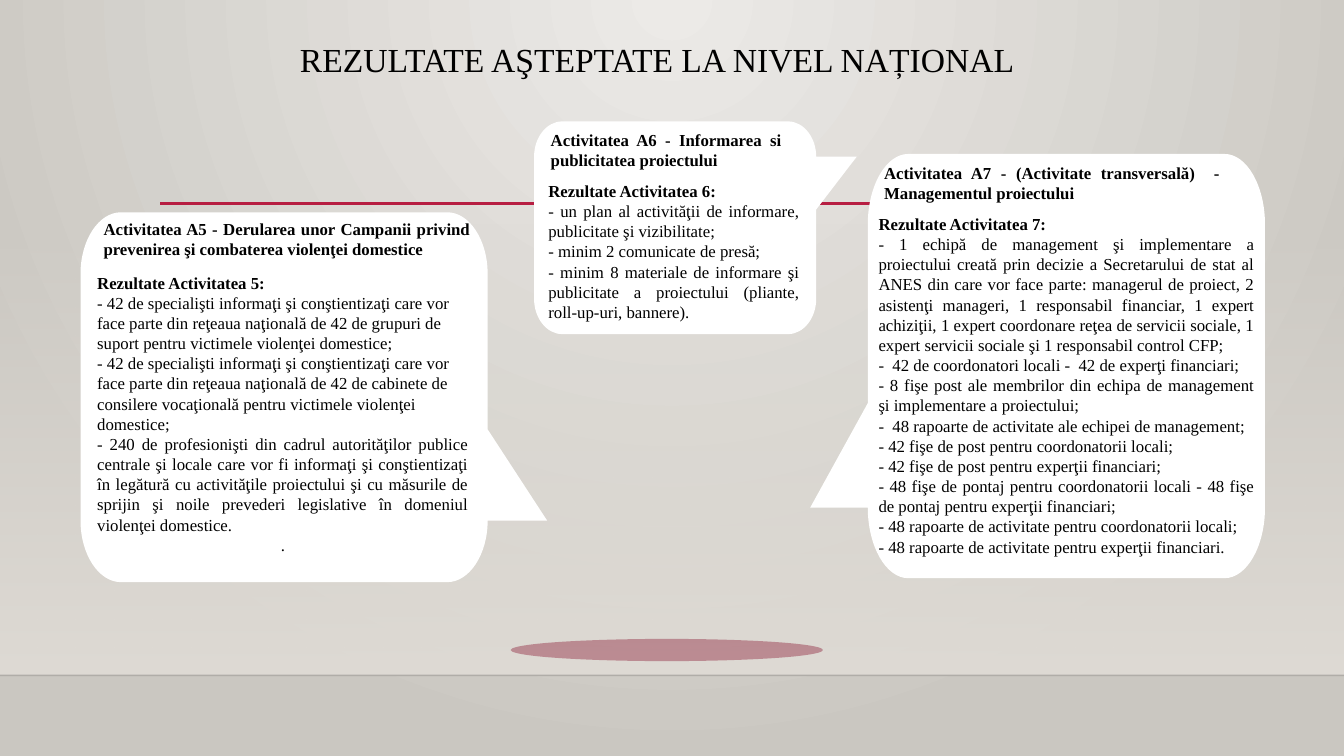
from dataclasses import dataclass
from typing import NamedTuple

import lxml.etree
import pptx
import pptx.dml.color
import pptx.dml.fill
import pptx.enum.shapes
import pptx.enum.text
import pptx.oxml.ns
import pptx.shapes.base
import pptx.slide
import pptx.util

Cm = pptx.util.Cm
RGBColor = pptx.dml.color.RGBColor
Align = pptx.enum.text.PP_ALIGN
Preset = pptx.enum.shapes.MSO_SHAPE
qn = pptx.oxml.ns.qn

BLACK = RGBColor(0x00, 0x00, 0x00)
WHITE = RGBColor(0xFF, 0xFF, 0xFF)
CRIMSON = RGBColor(0xB7, 0x1E, 0x42)
DARK_CRIMSON = RGBColor(0x89, 0x17, 0x31)
FLOOR = RGBColor(0xDF, 0xDB, 0xD5)
BACKGROUND_CENTRE = RGBColor(0xEC, 0xEA, 0xE7)
BACKGROUND_EDGE = RGBColor(0xCA, 0xC7, 0xC1)

FONT = "Times New Roman"
SLIDE_WIDTH, SLIDE_HEIGHT = 33.87, 19.05
HORIZON = 17.02
ROUNDING = 0.55
TOP_RIGHT, BOTTOM_RIGHT, BOTTOM_LEFT = range(3)
Point = tuple[float, float]


class Box(NamedTuple):
    """A frame in centimetres."""
    left: float
    top: float
    width: float
    height: float


class Item(NamedTuple):
    text: str
    alignment: Align = Align.JUSTIFY
    bold: bool = False


@dataclass
class Bubble:
    """A rounded callout whose tail leaves the side next to one corner."""
    body: Box
    corner_width: float
    corner_height: float
    tail_corner: int
    tip_x: float
    foot_y: float
    heading_box: Box
    heading: str
    results_box: Box
    results: list[Item]


BUBBLES = [
    Bubble(
        Box(2.03, 5.35, 10.26, 9.32), 1.02, 1.55, BOTTOM_RIGHT, 13.79, 10.82,
        Box(2.36, 5.39, 9.75, 1.27),
        "Activitatea A5 - Derularea unor Campanii privind prevenirea şi combaterea violenţei domestice",
        Box(2.2, 6.74, 9.86, 7.44),
        [
            Item("Rezultate Activitatea 5:", Align.LEFT, True),
            Item("- 42 de specialişti informaţi şi conştientizaţi care vor face parte din reţeaua "
                 "naţională de 42 de grupuri de suport pentru victimele violenţei domestice;", Align.LEFT),
            Item("- 42 de specialişti informaţi şi conştientizaţi care vor face parte din reţeaua naţională "
                 "de 42 de cabinete de consilere vocaţională pentru victimele violenţei domestice;", Align.LEFT),
            Item("- 240 de profesionişti din cadrul autorităţilor publice centrale şi locale care vor fi "
                 "informaţi şi conştientizaţi în legătură cu activităţile proiectului şi cu măsurile de "
                 "sprijin şi noile prevederi legislative în domeniul violenţei domestice."),
            Item(".", Align.CENTER),
        ]),
    Bubble(
        Box(13.46, 3.06, 7.11, 5.36), 0.71, 0.89, TOP_RIGHT, 21.59, 5.28,
        Box(13.63, 3.15, 6.32, 1.27),
        "Activitatea A6 - Informarea si publicitatea proiectului",
        Box(13.57, 4.43, 6.83, 3.89),
        [
            Item("Rezultate Activitatea 6:", bold=True),
            Item("- un plan al activităţii de informare, publicitate şi vizibilitate;"),
            Item("- minim 2 comunicate de presă;"),
            Item("- minim 8 materiale de informare şi publicitate a proiectului "
                 "(pliante, roll-up-uri, bannere)."),
        ]),
    Bubble(
        Box(21.87, 3.88, 10.01, 10.69), 1.02, 1.78, BOTTOM_LEFT, 20.42, 10.16,
        Box(22.03, 3.97, 8.97, 1.8),
        "Activitatea A7 - (Activitate transversală)  - Managementul proiectului",
        Box(21.89, 5.26, 9.98, 8.97),
        [
            Item("Rezultate Activitatea 7:", bold=True),
            Item("- 1 echipă de management şi implementare a proiectului creată prin decizie a "
                 "Secretarului de stat al ANES din care vor face parte: managerul de proiect, 2 asistenţi "
                 "manageri, 1 responsabil financiar, 1 expert achiziţii, 1 expert coordonare reţea de "
                 "servicii sociale, 1 expert servicii sociale şi 1 responsabil control CFP;"),
            Item("-  42 de coordonatori locali -  42 de experţi financiari;"),
            Item("- 8 fişe post ale membrilor din echipa de management şi implementare a proiectului;"),
            Item("-  48 rapoarte de activitate ale echipei de management;"),
            Item("- 42 fişe de post pentru coordonatorii locali;"),
            Item("- 42 fişe de post pentru experţii financiari;"),
            Item("- 48 fişe de pontaj pentru coordonatorii locali - 48 fişe de pontaj pentru experţii financiari;"),
            Item("- 48 rapoarte de activitate pentru coordonatorii locali;"),
            Item("- 48 rapoarte de activitate pentru experţii financiari."),
        ]),
]


def set_opacity(element: lxml.etree._Element, percent: int) -> None:
    """Make the first RGB colour inside the element partly transparent."""
    color = element.find(".//" + qn("a:srgbClr"))
    lxml.etree.SubElement(color, qn("a:alpha"), val=str(percent * 1000))


def set_gradient(fill: pptx.dml.fill.FillFormat, first: RGBColor, last: RGBColor) -> None:
    fill.gradient()
    for stop, color, position in zip(fill.gradient_stops, (first, last), (0, 1)):
        stop.color.rgb = color
        stop.position = position


def add_background(slide: pptx.slide.Slide) -> None:
    set_gradient(slide.background.fill, BACKGROUND_CENTRE, BACKGROUND_EDGE)
    gradient = slide.element.find(".//" + qn("a:gradFill"))
    gradient.remove(gradient.find(qn("a:lin")))
    circle = lxml.etree.SubElement(gradient, qn("a:path"), path="circle")
    lxml.etree.SubElement(circle, qn("a:fillToRect"), l="43000", t="0", r="43000", b="100000")


def add_preset(slide: pptx.slide.Slide, preset: Preset, box: Box) -> pptx.shapes.base.BaseShape:
    shape = slide.shapes.add_shape(preset, *map(Cm, box))
    shape.shadow.inherit = False
    shape.line.fill.background()
    return shape


def add_horizontal_line(slide: pptx.slide.Slide, left: float, right: float, y: float,
                        color: RGBColor, width: float, opacity: int = 100) -> None:
    line = slide.shapes.add_connector(
        pptx.enum.shapes.MSO_CONNECTOR.STRAIGHT, Cm(left), Cm(y), Cm(right), Cm(y))
    line.line.color.rgb = color
    line.line.width = pptx.util.Pt(width)
    if opacity < 100:
        set_opacity(line.element.spPr, opacity)
    lxml.etree.SubElement(line.element.spPr, qn("a:effectLst"))


def add_text(slide: pptx.slide.Slide, box: Box, items: list[Item], *, size: float = 12,
             wrap: bool = True, line_spacing: float = 1.0, space_after: float = 0) -> None:
    frame = slide.shapes.add_textbox(*map(Cm, box)).text_frame
    frame.word_wrap = wrap
    frame.auto_size = pptx.enum.text.MSO_AUTO_SIZE.SHAPE_TO_FIT_TEXT
    for index, item in enumerate(items):
        paragraph = frame.add_paragraph() if index else frame.paragraphs[0]
        paragraph.alignment = item.alignment
        paragraph.line_spacing = line_spacing
        paragraph.space_after = pptx.util.Pt(space_after)
        run = paragraph.add_run()
        run.text = item.text
        run.font.name = FONT
        run.font.size = pptx.util.Pt(size)
        run.font.bold = item.bold
        run.font.color.rgb = BLACK


def bubble_outline(bubble: Bubble) -> tuple[list[Point], list[int]]:
    """Return the clockwise points and the index where each corner's curve begins."""
    left, top, width, height = bubble.body
    right, bottom = left + width, top + height
    near_x, far_x = left + bubble.corner_width, right - bubble.corner_width
    near_y, far_y = top + bubble.corner_height, bottom - bubble.corner_height
    corners = [((far_x, top), (right, top), (right, near_y)),
               ((right, far_y), (right, bottom), (far_x, bottom)),
               ((near_x, bottom), (left, bottom), (left, far_y)),
               ((left, near_y), (left, top), (near_x, top))]
    points, curves = [(near_x, top)], []
    for corner, (start, vertex, end) in enumerate(corners):
        side_x, side_y = start if corner == BOTTOM_RIGHT else end
        tail = [(bubble.tip_x, side_y), (side_x, bubble.foot_y)] if corner == bubble.tail_corner else []
        before, after = (tail[::-1], []) if corner == BOTTOM_RIGHT else ([], tail)
        handles = [tuple(a + ROUNDING * (b - a) for a, b in zip(point, vertex)) for point in (start, end)]
        points += [*before, start]
        curves.append(len(points))
        points += [*handles, end, *after]
    return points, curves


def add_bubble(slide: pptx.slide.Slide, bubble: Bubble) -> None:
    points, curves = bubble_outline(bubble)
    start, *others = [(Cm(x), Cm(y)) for x, y in points]
    builder = slide.shapes.build_freeform(*start)
    builder.add_line_segments(others, close=True)
    shape = builder.convert_to_shape()
    segments = shape.element.findall(".//" + qn("a:lnTo"))
    for index in curves:
        curve = lxml.etree.Element(qn("a:cubicBezTo"))
        segments[index - 1].addprevious(curve)
        for segment in segments[index - 1:index + 2]:
            curve.append(segment.find(qn("a:pt")))
            segment.getparent().remove(segment)
    shape.shadow.inherit = False
    shape.fill.solid()
    shape.fill.fore_color.rgb = WHITE
    shape.line.fill.background()
    add_text(slide, bubble.heading_box, [Item(bubble.heading, bold=True)])
    add_text(slide, bubble.results_box, bubble.results)


presentation = pptx.Presentation()
presentation.slide_width, presentation.slide_height = Cm(SLIDE_WIDTH), Cm(SLIDE_HEIGHT)
slide = presentation.slides.add_slide(presentation.slide_layouts[6])
add_background(slide)
wall = add_preset(slide, Preset.RECTANGLE, Box(0, 5.61, SLIDE_WIDTH, HORIZON - 5.61))
set_gradient(wall.fill, FLOOR, FLOOR)
wall.fill.gradient_angle = 270
set_opacity(wall.element.spPr, 0)
add_horizontal_line(slide, 0, SLIDE_WIDTH, HORIZON, BLACK, 1, opacity=20)
add_horizontal_line(slide, 4.04, 30.73, 5.13, CRIMSON, 2.5)
ellipse = add_preset(slide, Preset.OVAL, Box(12.87, 16.1, 7.87, 0.56))
ellipse.fill.solid()
ellipse.fill.fore_color.rgb = DARK_CRIMSON
set_opacity(ellipse.element.spPr, 40)
for bubble in BUBBLES:
    add_bubble(slide, bubble)
add_text(slide, Box(7.31, 0.79, 18.69, 1.27), [Item("REZULTATE AŞTEPTATE LA NIVEL NAȚIONAL")],
         size=24, wrap=False, line_spacing=1.07, space_after=8)
presentation.save("out.pptx")
